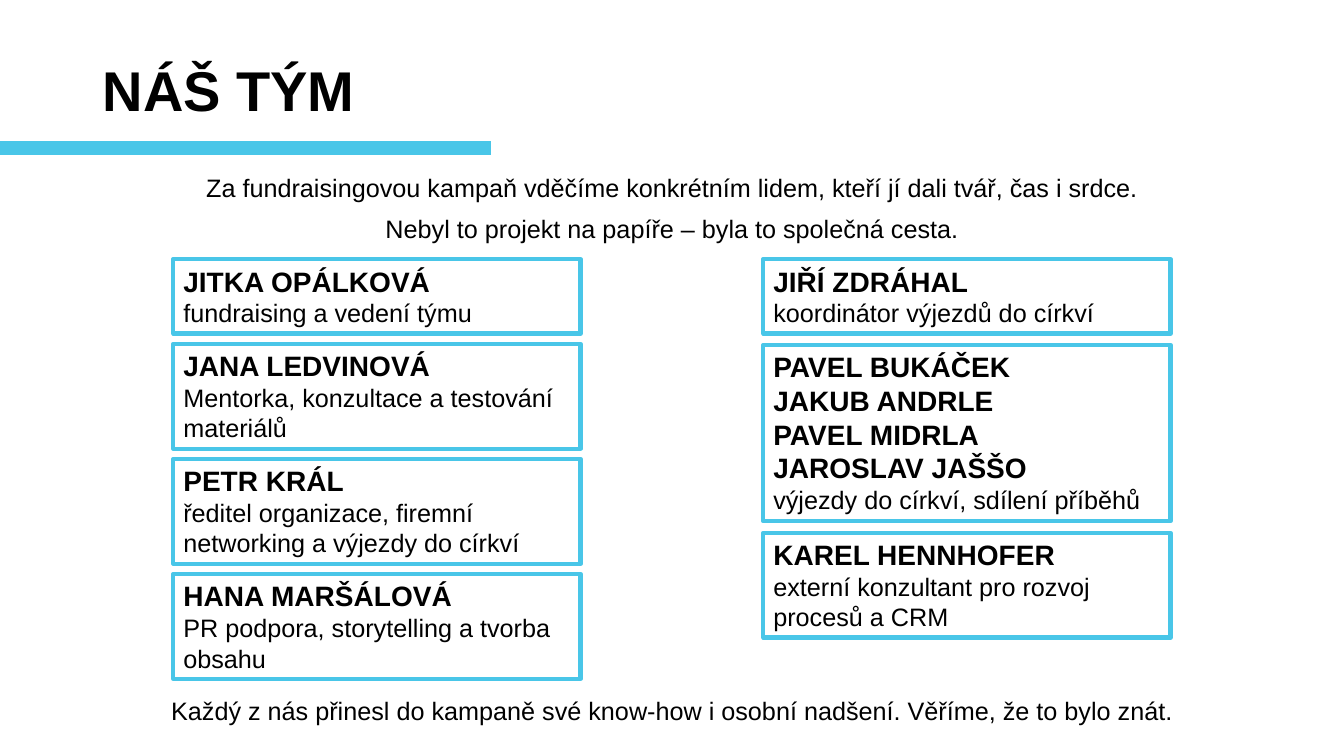
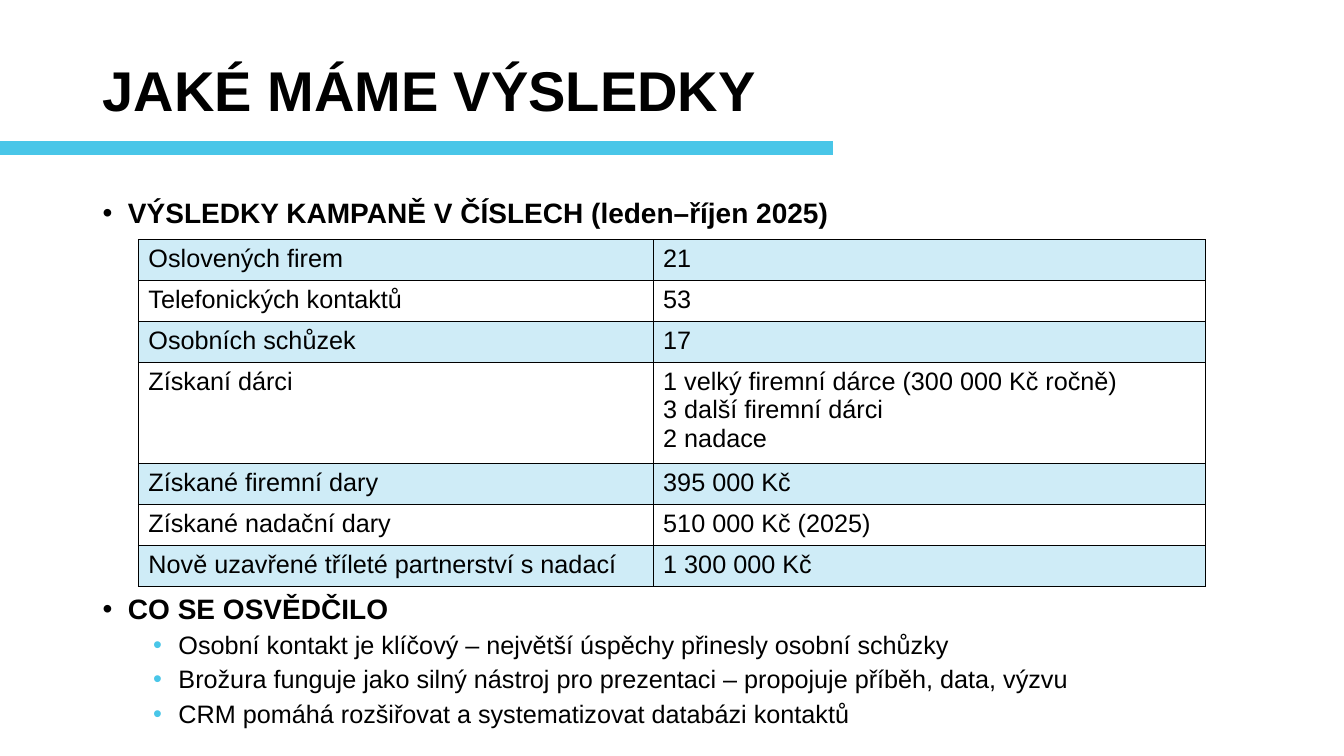
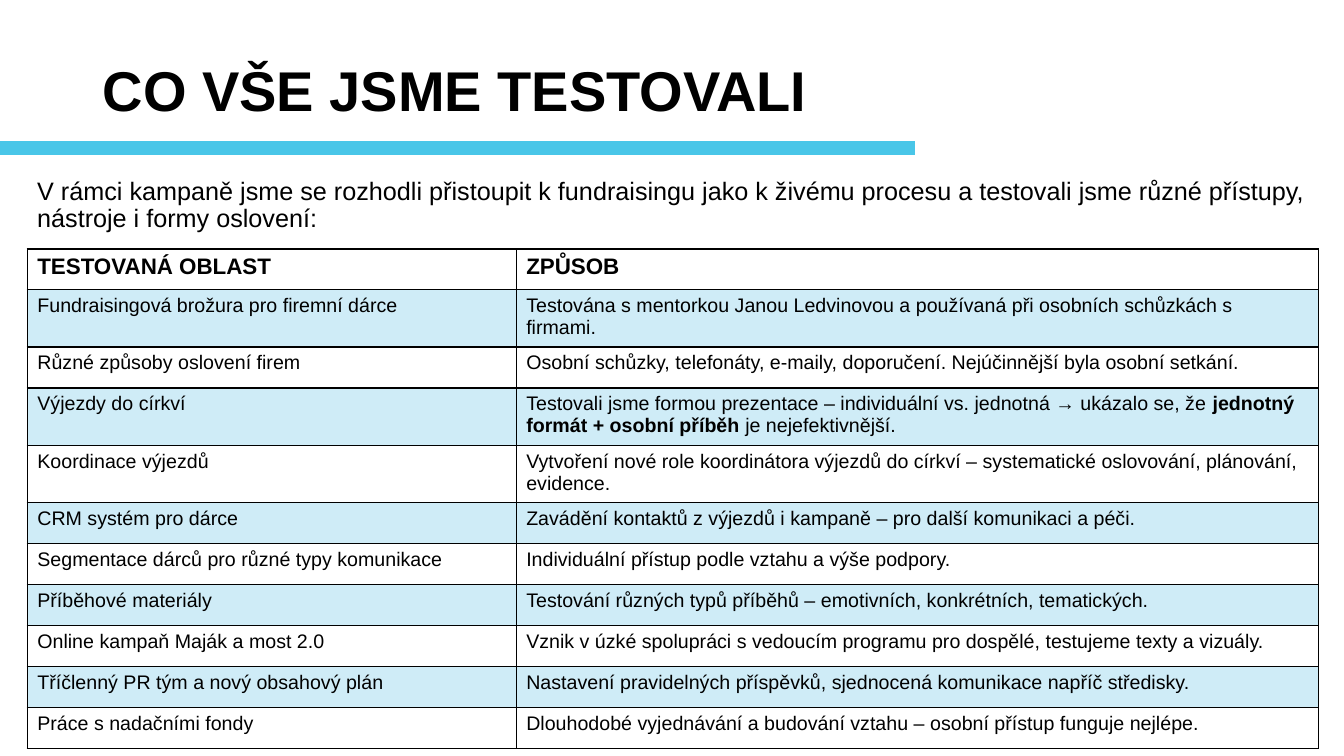
from lxml import etree
from pptx import Presentation
from pptx.dml.color import RGBColor
from pptx.enum.shapes import MSO_CONNECTOR, MSO_SHAPE
from pptx.enum.text import MSO_ANCHOR, MSO_AUTO_SIZE, PP_ALIGN
from pptx.oxml.ns import qn
from pptx.util import Inches, Pt

LEFT, CENTER = PP_ALIGN.LEFT, PP_ALIGN.CENTER
MIDDLE, TOP = MSO_ANCHOR.MIDDLE, MSO_ANCHOR.TOP
FIXED, GROW = MSO_AUTO_SIZE.NONE, MSO_AUTO_SIZE.SHAPE_TO_FIT_TEXT
RECTANGLE, STRAIGHT = MSO_SHAPE.RECTANGLE, MSO_CONNECTOR.STRAIGHT
TITLE_ONLY = 5

FONT = "Arial"
BLACK, WHITE, ACCENT, BAND = "000000", "FFFFFF", "49C6E8", "CFECF7"

MARGIN, CONTENT_WIDTH = 6.9, 86.25
RULE_TOP = 19.6
ROW_HEIGHT = 5.42
CARD_WIDTH, CARDS_TOP = 30.3, 34.27
BULLET_INDENT = 1.88

TEAM_COLUMNS = [
    (12.9, 1.35, [
        (9.87, ["JITKA OPÁLKOVÁ"], "fundraising a vedení týmu"),
        (13.87, ["JANA LEDVINOVÁ"], "Mentorka, konzultace a testování materiálů"),
        (13.87, ["PETR KRÁL"], "ředitel organizace, firemní networking a výjezdy do církví"),
        (13.87, ["HANA MARŠÁLOVÁ"], "PR podpora, storytelling a tvorba obsahu"),
    ]),
    (56.8, 1.5, [
        (9.87, ["JIŘÍ ZDRÁHAL"], "koordinátor výjezdů do církví"),
        (23.33, ["PAVEL BUKÁČEK", "JAKUB ANDRLE", "PAVEL MIDRLA", "JAROSLAV JAŠŠO"],
         "výjezdy do církví, sdílení příběhů"),
        (13.87, ["KAREL HENNHOFER"], "externí konzultant pro rozvoj procesů a CRM"),
    ]),
]

RESULTS = [
    ("Oslovených firem", "21"),
    ("Telefonických kontaktů", "53"),
    ("Osobních schůzek", "17"),
    ("Získaní dárci", "1 velký firemní dárce (300 000 Kč ročně)\n3 další firemní dárci\n2 nadace"),
    ("Získané firemní dary", "395 000 Kč"),
    ("Získané nadační dary", "510 000 Kč (2025)"),
    ("Nově uzavřené tříleté partnerství s nadací", "1 300 000 Kč"),
]

LESSONS = [
    "Osobní kontakt je klíčový – největší úspěchy přinesly osobní schůzky",
    "Brožura funguje jako silný nástroj pro prezentaci – propojuje příběh, data, výzvu",
    "CRM pomáhá rozšiřovat a systematizovat databázi kontaktů",
]

TESTED_HEADER = ("TESTOVANÁ OBLAST", "ZPŮSOB")
TESTED = [
    ("Fundraisingová brožura pro firemní dárce",
     "Testována s mentorkou Janou Ledvinovou a používaná při osobních schůzkách s firmami."),
    ("Různé způsoby oslovení firem",
     "Osobní schůzky, telefonáty, e-maily, doporučení. Nejúčinnější byla osobní setkání."),
    ("Výjezdy do církví",
     "Testovali jsme formou prezentace – individuální vs. jednotná → ukázalo se, že "
     "**jednotný formát + osobní příběh** je nejefektivnější."),
    ("Koordinace výjezdů",
     "Vytvoření nové role koordinátora výjezdů do církví – systematické oslovování, "
     "plánování, evidence."),
    ("CRM systém pro dárce",
     "Zavádění kontaktů z výjezdů i kampaně – pro další komunikaci a péči."),
    ("Segmentace dárců pro různé typy komunikace",
     "Individuální přístup podle vztahu a výše podpory."),
    ("Příběhové materiály",
     "Testování různých typů příběhů – emotivních, konkrétních, tematických."),
    ("Online kampaň Maják a most 2.0",
     "Vznik v úzké spolupráci s vedoucím programu pro dospělé, testujeme texty a vizuály."),
    ("Tříčlenný PR tým a nový obsahový plán",
     "Nastavení pravidelných příspěvků, sjednocená komunikace napříč středisky."),
    ("Práce s nadačními fondy",
     "Dlouhodobé vyjednávání a budování vztahu – osobní přístup funguje nejlépe."),
]


def color(value):
    """Turn a hex string into a colour."""
    return RGBColor.from_string(value)


def write(frame, text, size=18, bold=False, align=LEFT, spacing=1.0, before=0):
    """Add a paragraph to a frame, with **marked** parts in bold."""
    first = frame.paragraphs[0]
    paragraph = frame.add_paragraph() if first.runs else first
    paragraph.alignment = align
    paragraph.line_spacing = spacing
    paragraph.space_before = Pt(before)
    for index, part in enumerate(text.split("**")):
        run = paragraph.add_run()
        run.text = part
        run.font.name = FONT
        run.font.size = Pt(size)
        run.font.bold = bold or index % 2 == 1
        run.font.color.rgb = color(BLACK)
    return paragraph


class Deck:
    """Hold the shared style and the current slide on a grid of 100 by 100."""

    def __init__(self):
        """Start an empty widescreen presentation."""
        self.presentation = Presentation()
        self.presentation.slide_width = Inches(13.33)
        self.presentation.slide_height = Inches(7.5)
        self.slide = None

    def across(self, columns):
        """Convert grid columns to a length."""
        return round(self.presentation.slide_width * columns / 100)

    def down(self, rows):
        """Convert grid rows to a length."""
        return round(self.presentation.slide_height * rows / 100)

    def box(self, left, top, width, height):
        """Convert a grid rectangle to lengths."""
        return self.across(left), self.down(top), self.across(width), self.down(height)

    def new_slide(self, title, rule_end):
        """Add a slide with its title and the rule below it."""
        layout = self.presentation.slide_layouts[TITLE_ONLY]
        self.slide = self.presentation.slides.add_slide(layout)
        shape = self.slide.shapes.title
        shape.left, shape.top, shape.width, shape.height = self.box(
            MARGIN, 2.67, CONTENT_WIDTH, 19.33)
        frame = shape.text_frame
        frame.auto_size = FIXED
        frame.vertical_anchor = MIDDLE
        write(frame, title, size=40, bold=True, spacing=0.9)
        self.rule(rule_end)

    def rule(self, end):
        """Draw the thick line from the left edge."""
        height = self.down(RULE_TOP)
        line = self.slide.shapes.add_connector(STRAIGHT, 0, height, self.across(end), height)
        line.line.color.rgb = color(ACCENT)
        line.line.width = Pt(10)
        etree.SubElement(line._element.spPr, qn("a:effectLst"))

    def text_box(self, left, top, width, height):
        """Add a wrapping text box and return its frame."""
        shape = self.slide.shapes.add_textbox(*self.box(left, top, width, height))
        shape.text_frame.word_wrap = True
        return shape.text_frame

    def bullet(self, frame, text, level=0, **style):
        """Add a bulleted paragraph, with an accent bullet below the top level."""
        paragraph = write(frame, text, spacing=0.9, **style)
        properties = paragraph._p.get_or_add_pPr()
        indent = self.across(BULLET_INDENT)
        properties.set("marL", str(indent * (1 + 2 * level)))
        properties.set("indent", str(-indent))
        bullet_color = etree.SubElement(properties, qn("a:buClr"))
        etree.SubElement(bullet_color, qn("a:srgbClr"), val=ACCENT if level else BLACK)
        etree.SubElement(properties, qn("a:buFont"), typeface=FONT)
        etree.SubElement(properties, qn("a:buChar"), char="•")

    def card(self, left, top, height, names, role):
        """Add an outlined card with names and their role."""
        shape = self.slide.shapes.add_shape(RECTANGLE, *self.box(left, top, CARD_WIDTH, height))
        shape.shadow.inherit = False
        shape.fill.solid()
        shape.fill.fore_color.rgb = color(WHITE)
        shape.line.color.rgb = color(ACCENT)
        shape.line.width = Pt(3)
        frame = shape.text_frame
        frame.word_wrap = True
        frame.vertical_anchor = TOP
        frame.auto_size = GROW
        for name in names:
            write(frame, name, size=20, bold=True)
        write(frame, role)

    def cell(self, cell, text, fill, **style):
        """Fill, border and write one table cell."""
        properties = cell._tc.get_or_add_tcPr()
        for side in ("a:lnL", "a:lnR", "a:lnT", "a:lnB"):
            border = etree.SubElement(properties, qn(side), w=str(Pt(1)))
            solid = etree.SubElement(border, qn("a:solidFill"))
            etree.SubElement(solid, qn("a:srgbClr"), val=BLACK)
        cell.fill.solid()
        cell.fill.fore_color.rgb = color(fill)
        for line in text.split("\n"):
            write(cell.text_frame, line, **style)

    def table(self, left, top, widths, rows, size, header=None):
        """Add a banded table with an optional header row."""
        lines = ([header] if header else []) + rows
        shape = self.slide.shapes.add_table(
            len(lines), len(widths),
            *self.box(left, top, sum(widths), ROW_HEIGHT * len(lines)))
        table = shape.table
        table.first_row = table.horz_banding = False
        for column, width in zip(table.columns, widths):
            column.width = self.across(width)
        for index, texts in enumerate(lines):
            table.rows[index].height = self.down(ROW_HEIGHT)
            is_header = bool(header) and index == 0
            banded = index % 2 == (1 if header else 0)
            for number, text in enumerate(texts):
                self.cell(table.cell(index, number), text, BAND if banded else WHITE,
                          size=16 if is_header else size, bold=is_header)


def team_slide(deck):
    """Build the slide with the team cards."""
    deck.new_slide("NÁŠ TÝM", 36.5)
    centred = {"align": CENTER, "spacing": 0.9, "before": 10}
    intro = deck.text_box(10.2, 22.53, 79.6, 11.07)
    write(intro, "Za fundraisingovou kampaň vděčíme konkrétním lidem, "
                 "kteří jí dali tvář, čas i srdce.", **centred)
    write(intro, "Nebyl to projekt na papíře – byla to společná cesta.", **centred)
    for left, gap, cards in TEAM_COLUMNS:
        top = CARDS_TOP
        for height, names, role in cards:
            deck.card(left, top, height, names, role)
            top += height + gap
    closing = deck.text_box(10.2, 91.73, 79.6, 5.6)
    write(closing, "Každý z nás přinesl do kampaně své know-how i osobní nadšení. "
                   "Věříme, že to bylo znát.", **centred)


def results_slide(deck):
    """Build the slide with the campaign results."""
    deck.new_slide("JAKÉ MÁME VÝSLEDKY", 61.95)
    heading = deck.text_box(MARGIN, 25.73, CONTENT_WIDTH, 5.5)
    deck.bullet(heading, "VÝSLEDKY KAMPANĚ V ČÍSLECH (leden–říjen 2025)",
                size=20, bold=True, before=10)
    deck.table(10.3, 31.73, (38.3, 41.1), RESULTS, size=18)
    lessons = deck.text_box(MARGIN, 78.13, CONTENT_WIDTH, 20.1)
    deck.bullet(lessons, "CO SE OSVĚDČILO", size=20, bold=True, before=10)
    for lesson in LESSONS:
        deck.bullet(lessons, lesson, level=1, before=5)


def tested_slide(deck):
    """Build the slide with the tested approaches."""
    deck.new_slide("CO VŠE JSME TESTOVALI", 68.1)
    intro = deck.text_box(2.03, 22.93, 96, 10)
    write(intro, "V rámci kampaně jsme se rozhodli přistoupit k fundraisingu jako k živému "
                 "procesu a testovali jsme různé přístupy, nástroje i formy oslovení:",
          spacing=0.9, before=10)
    deck.table(2.03, 32.93, (36.38, 59.7), TESTED, size=14, header=TESTED_HEADER)


def main():
    """Build and save the presentation."""
    deck = Deck()
    team_slide(deck)
    results_slide(deck)
    tested_slide(deck)
    deck.presentation.save("out.pptx")


if __name__ == "__main__":
    main()
